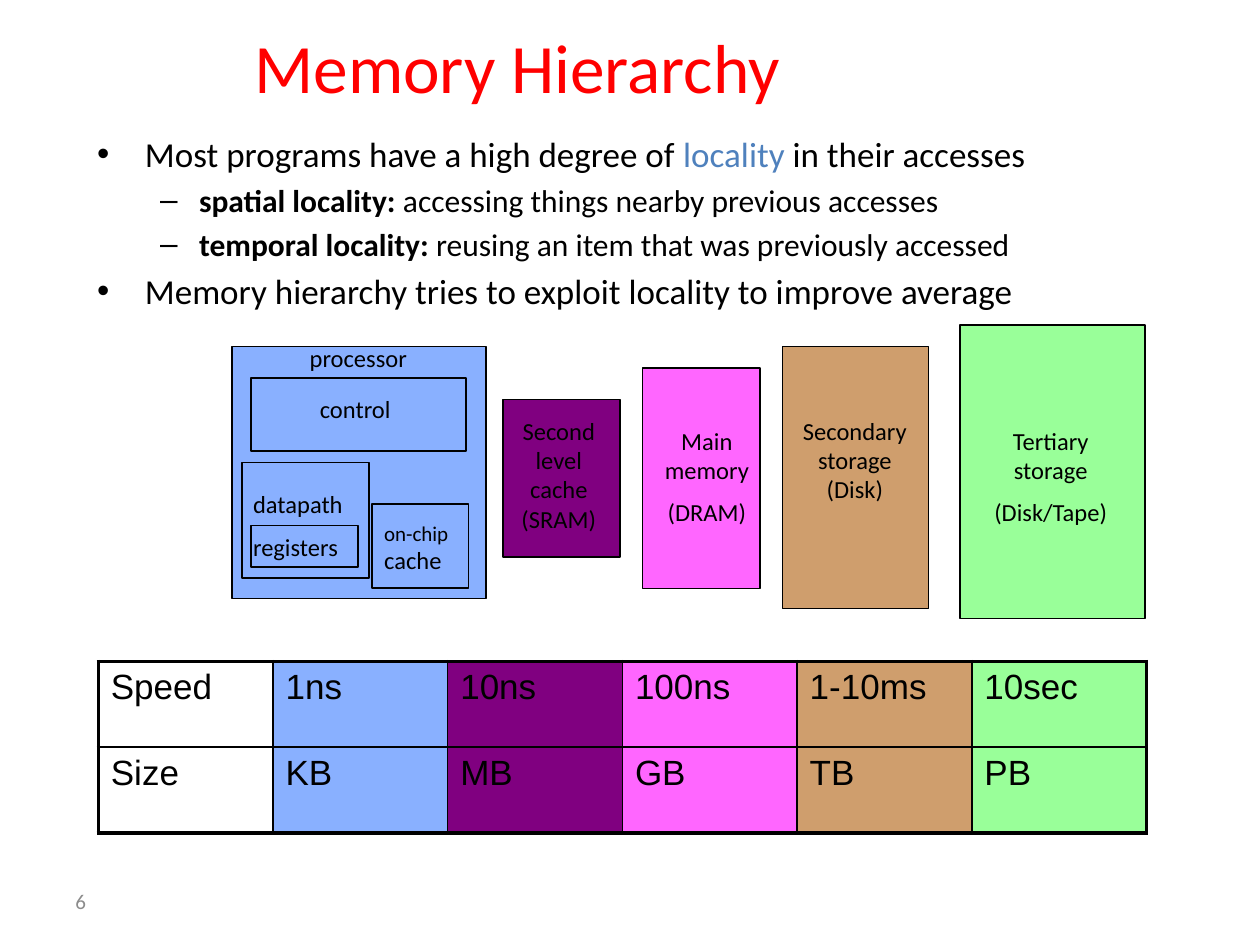
import pptx
import pptx.dml.color
import pptx.enum.shapes
import pptx.enum.text
import pptx.oxml
import pptx.oxml.ns
import pptx.util
from pptx.dml.color import RGBColor
from pptx.util import Inches, Pt

BLACK = RGBColor(0x00, 0x00, 0x00)
RED = RGBColor(0xFF, 0x00, 0x00)
GRAY = RGBColor(0x8C, 0x8C, 0x8C)
ACCENT = RGBColor(0x4F, 0x81, 0xBD)
BLUE = RGBColor(0x89, 0xB0, 0xFF)
PURPLE = RGBColor(0x80, 0x00, 0x80)
PINK = RGBColor(0xFF, 0x66, 0xFF)
TAN = RGBColor(0xCF, 0x9E, 0x6D)
GREEN = RGBColor(0x99, 0xFF, 0x99)

# Content: bullets are (level, size, runs); runs are (text, bold, colour)
TITLE = "Memory Hierarchy"
BULLETS = [
    (0, 20, [("Most programs have a high degree of ", False, BLACK),
             ("locality", False, ACCENT),
             (" in their accesses", False, BLACK)]),
    (1, 18, [("spatial locality:", True, BLACK),
             (" accessing things nearby previous accesses", False, BLACK)]),
    (1, 18, [("temporal locality:", True, BLACK),
             (" reusing an item that was previously accessed", False, BLACK)]),
    (0, 20, [("Memory hierarchy tries to exploit locality to improve average",
              False, BLACK)]),
]
LEVEL_INDENTS = [(0.38, -0.38), (0.81, -0.31)]

# Boxes: left, top, width, height, fill
BOXES = [
    (1.84, 2.75, 2.02, 2.00, BLUE),    # processor
    (1.99, 3.00, 1.71, 0.58, None),    # control
    (1.99, 4.17, 0.85, 0.33, None),    # registers
    (2.95, 4.00, 0.77, 0.67, None),    # on-chip cache
    (1.92, 3.67, 1.01, 0.92, None),    # datapath
    (3.99, 3.17, 0.93, 1.25, PURPLE),  # second level cache
    (5.10, 2.92, 0.93, 1.75, PINK),    # main memory
    (6.21, 2.75, 1.16, 2.08, TAN),     # secondary storage
    (7.62, 2.58, 1.47, 2.33, GREEN),   # tertiary storage
]

# Labels: left, top, width, height, paragraphs
PROCESSOR_LABELS = [
    (2.95, 4.08, 0.85, 0.53, ["on-chip cache"]),
    (1.91, 4.17, 1.02, 0.33, ["registers"]),
    (1.91, 3.83, 1.01, 0.33, ["datapath"]),
    (2.44, 3.08, 0.86, 0.33, ["control"]),
    (2.36, 2.67, 1.14, 0.33, ["processor"]),
]
STORAGE_LABELS = [
    (3.91, 3.25, 1.05, 1.03, ["Second level cache (SRAM)"]),
    (5.10, 3.33, 1.02, 0.91, ["Main memory", "(DRAM)"]),
    (6.16, 3.25, 1.25, 0.80, ["Secondary storage (Disk)"]),
    (7.66, 3.33, 1.36, 0.91, ["Tertiary storage", "(Disk/Tape)"]),
]
SMALL_TEXT = "on-chip "

TABLE_ROWS = [
    ["Speed", "1ns", "10ns", "100ns", "1-10ms", "10sec"],
    ["Size", "KB", "MB", "GB", "TB", "PB"],
]
COLUMN_FILLS = [None, BLUE, PURPLE, PINK, TAN, GREEN]
OUTER_BORDER, INNER_BORDER = 2.25, 1


def style(run, size, color=BLACK, bold=False, name="Calibri"):
    run.font.name = name
    run.font.size = Pt(size)
    run.font.bold = bold
    run.font.color.rgb = color


def set_fill(fill, color):
    if color is None:
        fill.background()
    else:
        fill.solid()
        fill.fore_color.rgb = color


def add_box(slide, left, top, width, height, color):
    box = slide.shapes.add_shape(
        pptx.enum.shapes.MSO_SHAPE.RECTANGLE,
        Inches(left), Inches(top), Inches(width), Inches(height))
    box.shadow.inherit = False
    set_fill(box.fill, color)
    box.line.color.rgb = BLACK
    box.line.width = Pt(1)


def add_label(slide, left, top, width, height, texts, alignment,
              size=14, color=BLACK):
    label = slide.shapes.add_textbox(
        Inches(left), Inches(top), Inches(width), Inches(height))
    frame = label.text_frame
    frame.word_wrap = True
    for index, text in enumerate(texts):
        paragraph = frame.add_paragraph() if index else frame.paragraphs[0]
        paragraph.alignment = alignment
        if index:
            paragraph.space_before = Pt(size / 2)
        if text.startswith(SMALL_TEXT):
            small = paragraph.add_run()
            small.text = SMALL_TEXT
            style(small, 12, color)
            text = text[len(SMALL_TEXT):]
        run = paragraph.add_run()
        run.text = text
        style(run, size, color)
    return label


def add_border(cell, side, width):
    cell._tc.get_or_add_tcPr().append(pptx.oxml.parse_xml(
        f'<a:ln{side} {pptx.oxml.ns.nsdecls("a")} w="{Pt(width)}">'
        f'<a:solidFill><a:srgbClr val="{BLACK}"/></a:solidFill></a:ln{side}>'))


def add_body(slide):
    body = slide.placeholders[1]
    body.left, body.top = Inches(0.67), Inches(1)
    body.width, body.height = Inches(8.75), Inches(1.46)
    frame = body.text_frame
    frame.auto_size = pptx.enum.text.MSO_AUTO_SIZE.NONE
    for index, (level, size, runs) in enumerate(BULLETS):
        paragraph = frame.add_paragraph() if index else frame.paragraphs[0]
        paragraph.level = level
        margin, indent = LEVEL_INDENTS[level]
        properties = paragraph._p.get_or_add_pPr()
        properties.set("marL", str(Inches(margin)))
        properties.set("indent", str(Inches(indent)))
        for text, bold, color in runs:
            run = paragraph.add_run()
            run.text = text
            style(run, size, color, bold)


def add_speed_table(slide):
    last_row, last_column = len(TABLE_ROWS) - 1, len(COLUMN_FILLS) - 1
    table = slide.shapes.add_table(
        last_row + 1, last_column + 1,
        Inches(0.78), Inches(5.25), Inches(8.32), Inches(1.36)).table
    table.first_row = False
    table.horz_banding = False
    for row, texts in enumerate(TABLE_ROWS):
        for column, text in enumerate(texts):
            cell = table.cell(row, column)
            cell.text = text
            style(cell.text_frame.paragraphs[0].runs[0], 20, name="Arial")
            outer_sides = {"L": column == 0, "R": column == last_column,
                           "T": row == 0, "B": row == last_row}
            for side, outer in outer_sides.items():
                add_border(cell, side, OUTER_BORDER if outer else INNER_BORDER)
            set_fill(cell.fill, COLUMN_FILLS[column])


def main():
    presentation = pptx.Presentation()
    presentation.slide_width = Inches(10)
    presentation.slide_height = Inches(7.5)
    # Title and content layout: the bullets are a real body placeholder
    slide = presentation.slides.add_slide(presentation.slide_layouts[1])
    align = pptx.enum.text.PP_ALIGN

    # Title
    title = slide.shapes.title
    title.left, title.top = Inches(0.88), Inches(0.34)
    title.width, title.height = Inches(6.45), Inches(0.37)
    title.text_frame.text = TITLE
    title.text_frame.auto_size = pptx.enum.text.MSO_AUTO_SIZE.NONE
    style(title.text_frame.paragraphs[0].runs[0], 39.6, RED)

    add_body(slide)

    # Memory diagram
    for box in BOXES:
        add_box(slide, *box)
    for label in PROCESSOR_LABELS:
        add_label(slide, *label, align.LEFT)
    for label in STORAGE_LABELS:
        add_label(slide, *label, align.CENTER)

    add_speed_table(slide)

    # Slide number
    number = add_label(slide, 0.5, 6.95, 2.33, 0.4, ["6"], align.LEFT, 12, GRAY)
    number.text_frame.vertical_anchor = pptx.enum.text.MSO_ANCHOR.MIDDLE

    presentation.save("out.pptx")


if __name__ == "__main__":
    main()
